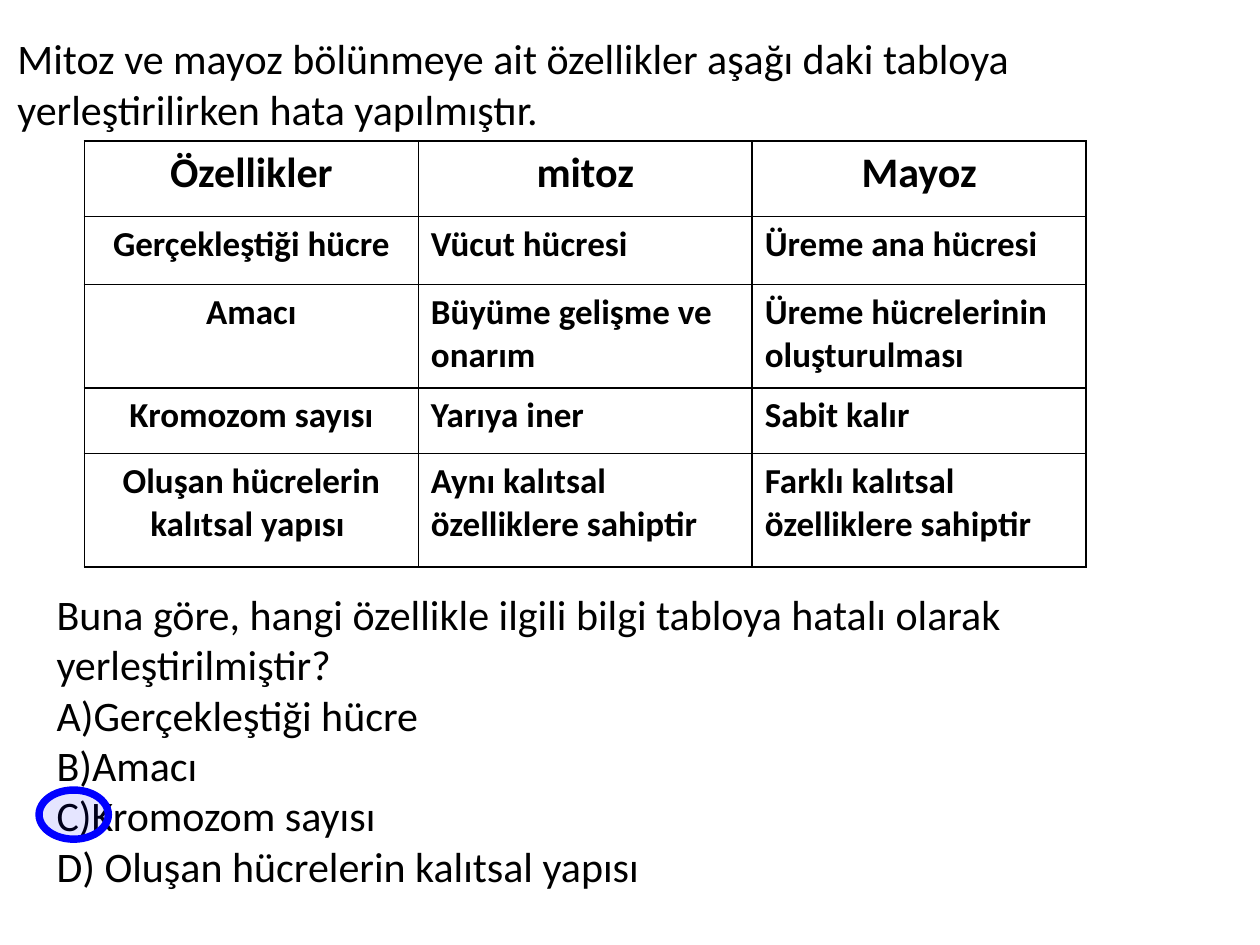
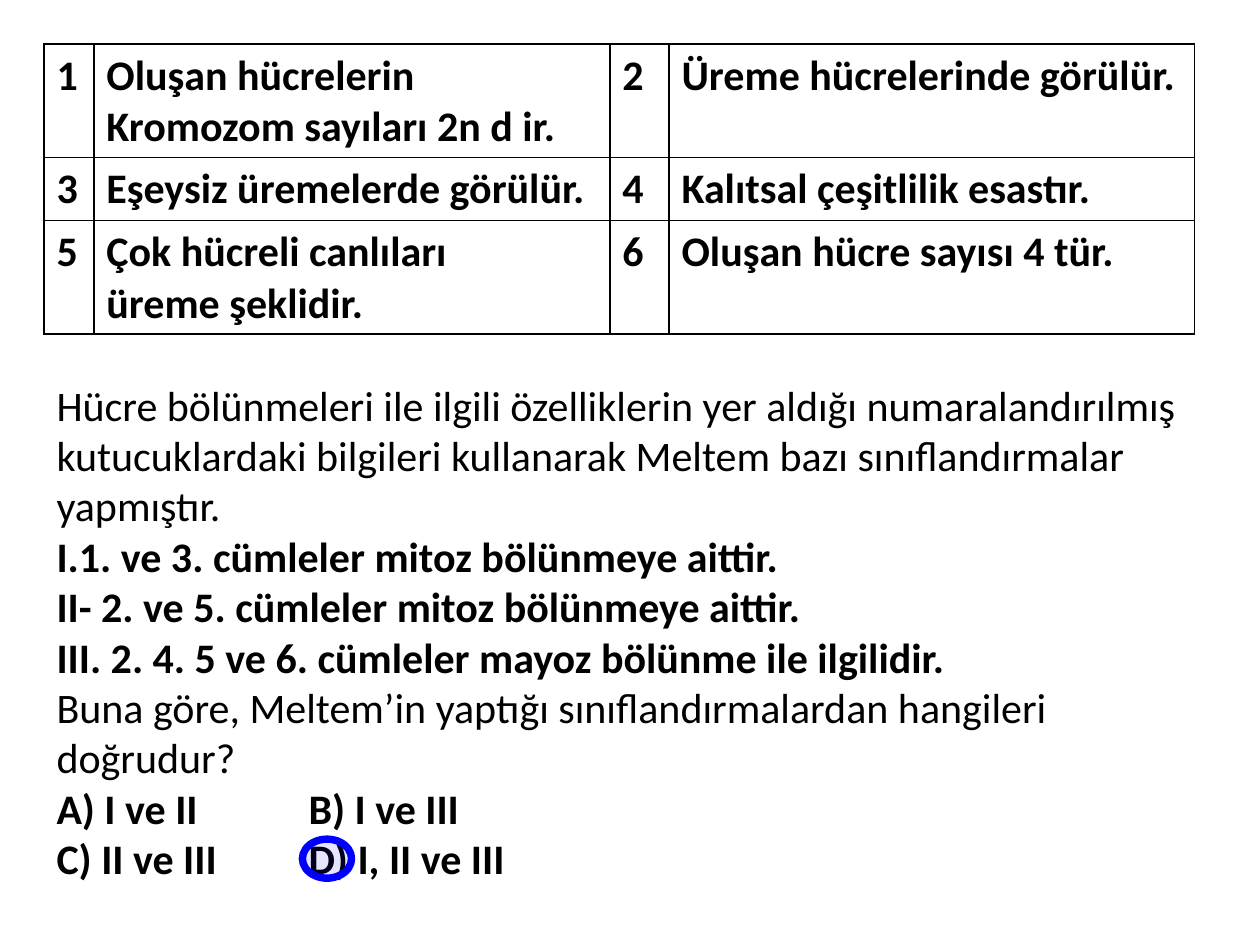
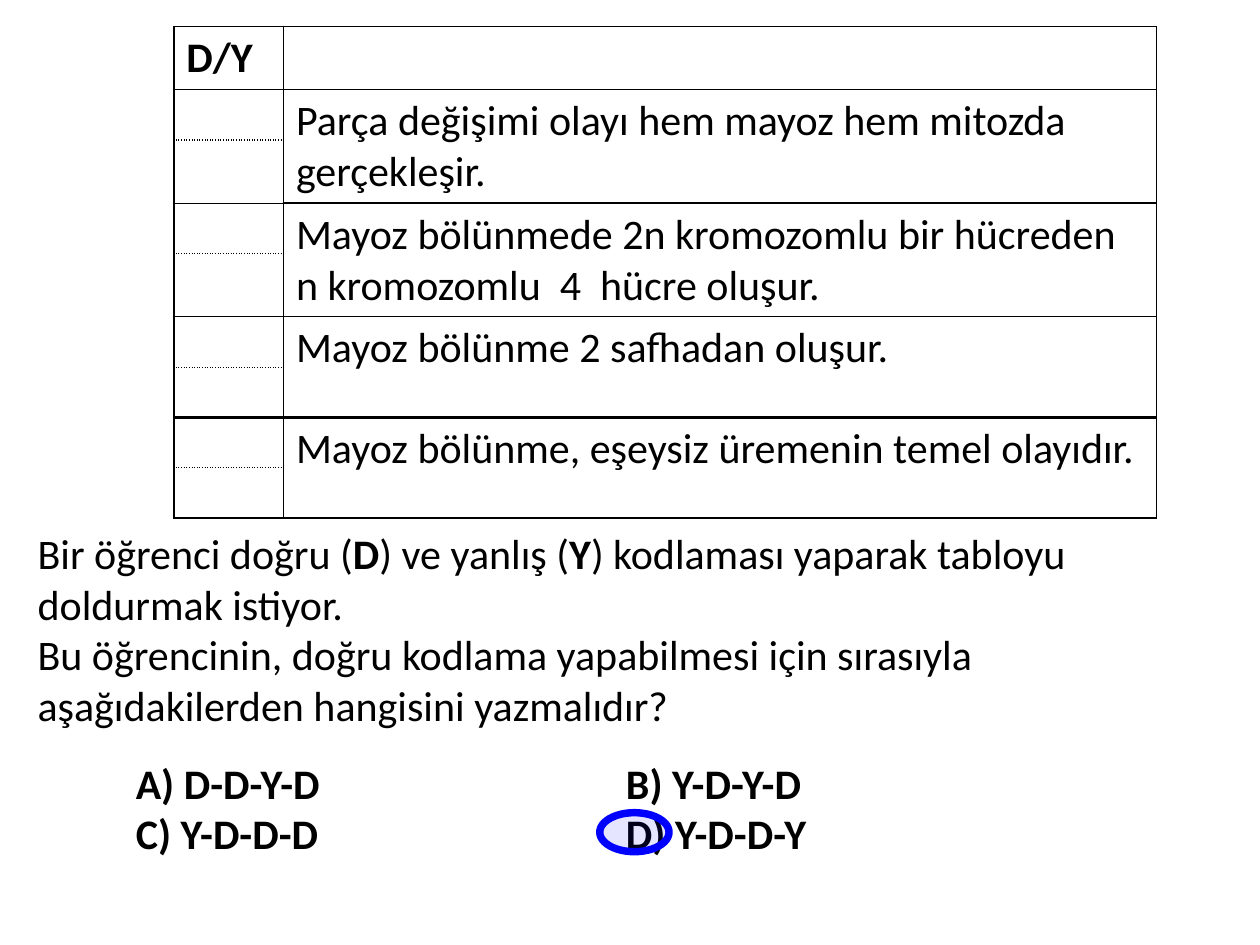
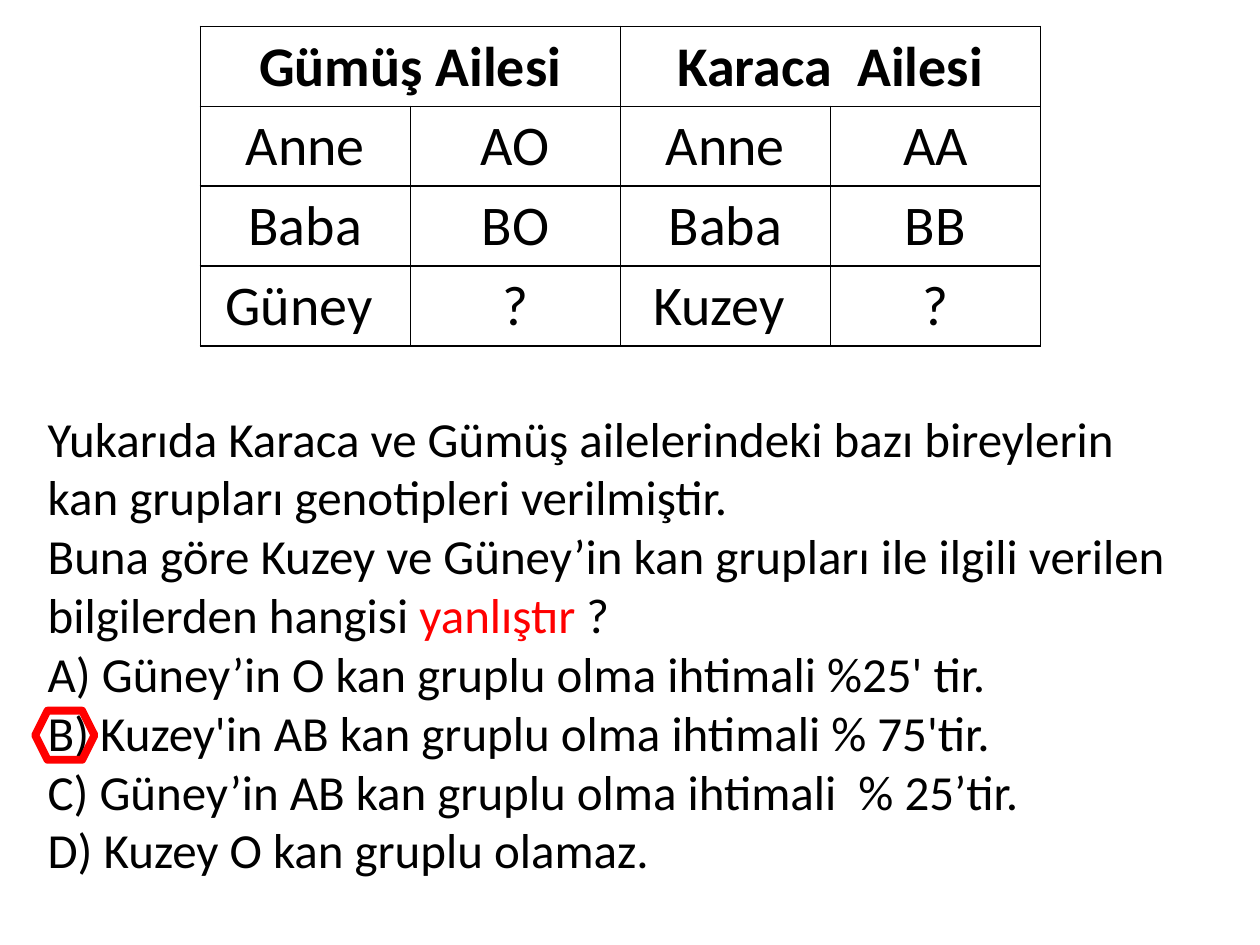
from pptx import Presentation
from pptx import util as u
from pptx.dml.color import RGBColor
from pptx.enum import shapes, text
from pptx.oxml import parse_xml
from pptx.oxml.ns import nsdecls, qn
from lxml import etree

WIDE, HIGH = u.Inches(10), u.Inches(7.5)
COLS, ROWS = 100, 75
INK = {"text": "000000", "paper": "FFFFFF", "mark": "0000FF", "wrong": "FF0000"}
BASE = {"name": "Calibri", "size": 24, "bold": False, "ink": "text"}
BOLD = {"bold": True}
MID = text.PP_ALIGN.CENTER
LEFT = text.PP_ALIGN.LEFT
DOTS = (0.75, "sysDot")
THIN = (0.25, "solid")
LINE = (1, "solid")
THICK = (2.25, "solid")


def across(n):
    return round(WIDE * n / COLS)


def down(n):
    return round(HIGH * n / ROWS)


def place(x, y, w, h):
    return across(x), down(y), across(w), down(h)


def paint(key):
    return RGBColor.from_string(INK[key])


def add_run(para, words, form):
    run = para.add_run()
    run.text = words
    for key, val in form.items():
        if key == "ink":
            run.font.color.rgb = paint(val)
        else:
            setattr(run.font, key, u.Pt(val) if key == "size" else val)


def fill_para(para, parts, form):
    for part in [parts] if isinstance(parts, (str, tuple)) else parts:
        words, extra = (part, {}) if isinstance(part, str) else part
        for num, row in enumerate(words.split("\n")):
            if num:
                para.add_line_break()
            if row:
                add_run(para, row, {**BASE, **form, **extra})


def set_tab(para, stop):
    tabs = etree.SubElement(para._p.get_or_add_pPr(), qn("a:tabLst"))
    etree.SubElement(tabs, qn("a:tab"), pos=str(across(stop)), algn="l")


def add_text(slide, spot, paras, form={}, stop=None):
    frame = slide.shapes.add_textbox(*place(*spot)).text_frame
    frame.word_wrap = True
    frame.auto_size = text.MSO_AUTO_SIZE.SHAPE_TO_FIT_TEXT
    for num, parts in enumerate(paras):
        para = frame.add_paragraph() if num else frame.paragraphs[0]
        if stop:
            set_tab(para, stop)
        fill_para(para, parts, form)


def draw_edge(cell, side, rule):
    width, dash = rule
    cell._tc.get_or_add_tcPr().append(parse_xml(
        f'<a:ln{side} {nsdecls("a")} w="{u.Pt(width)}"><a:solidFill>'
        f'<a:srgbClr val="{INK["text"]}"/></a:solidFill>'
        f'<a:prstDash val="{dash}"/></a:ln{side}>'))


def add_grid(slide, spot, wide, high, cells, look, spans=(), rules={}):
    x, y = spot
    box = place(x, y, sum(wide), sum(high))
    table = slide.shapes.add_table(len(high), len(wide), *box).table
    table.first_row = table.horz_banding = False
    for col, size in zip(table.columns, wide):
        col.width = across(size)
    for row, size in zip(table.rows, high):
        row.height = down(size)
    for r, row in enumerate(cells):
        for c, words in enumerate(row):
            cell = table.cell(r, c)
            for side, rule in (("L", LINE), ("R", LINE),
                               ("T", rules.get((r - 1, c), LINE)),
                               ("B", rules.get((r, c), LINE))):
                draw_edge(cell, side, rule)
            cell.fill.solid()
            cell.fill.fore_color.rgb = paint("paper")
            if words:
                form, align = look(r, c)
                para = cell.text_frame.paragraphs[0]
                para.alignment = align
                fill_para(para, words, form)
    for start, end in spans:
        table.cell(*start).merge(table.cell(*end))


def add_mark(slide, spot, kind="OVAL", ink="mark", width=4.25, tint=True):
    mark = slide.shapes.add_shape(shapes.MSO_SHAPE[kind], *place(*spot))
    mark.shadow.inherit = False
    mark.line.color.rgb = paint(ink)
    mark.line.width = u.Pt(width)
    if not tint:
        mark.fill.background()
        return
    mark.fill.solid()
    mark.fill.fore_color.rgb = paint(ink)
    clr = mark._element.spPr.find(qn("a:solidFill")).find(qn("a:srgbClr"))
    etree.SubElement(clr, qn("a:alpha"), val="10000")


def find_error(slide):
    add_text(slide, (0.4, 2.1, 97.7, 9.1), [
        "Mitoz ve mayoz bölünmeye ait özellikler aşağı daki tabloya "
        "yerleştirilirken hata yapılmıştır."])
    add_grid(slide, (6.7, 11.2), [26.5] * 3, [6, 5.4, 8.2, 5.2, 9], [
        ["Özellikler", "mitoz", "Mayoz"],
        ["Gerçekleştiği hücre", "Vücut hücresi", "Üreme ana hücresi"],
        ["Amacı", "Büyüme gelişme ve onarım", "Üreme hücrelerinin oluşturulması"],
        ["Kromozom sayısı", "Yarıya iner", "Sabit kalır"],
        ["Oluşan hücrelerin kalıtsal yapısı ", "Aynı kalıtsal özelliklere sahiptir",
         "Farklı kalıtsal özelliklere sahiptir"],
    ], lambda r, c: ({"bold": True, "size": 20 if r else 24}, LEFT if r and c else MID))
    add_text(slide, (3.5, 46.2, 89.8, 25.2), [
        "Buna göre, hangi özellikle ilgili bilgi tabloya hatalı olarak "
        "yerleştirilmiştir?",
        "A)Gerçekleştiği hücre",
        "B)Amacı",
        "C)Kromozom sayısı",
        "D) Oluşan hücrelerin kalıtsal yapısı"])
    add_mark(slide, (3.1, 62.7, 5.5, 3.9))


def sort_facts(slide):
    add_text(slide, (3.5, 29.6, 94.5, 41.4), [
        "Hücre bölünmeleri ile ilgili özelliklerin yer aldığı numaralandırılmış "
        "kutucuklardaki bilgileri kullanarak Meltem bazı sınıflandırmalar yapmıştır.",
        ("I.1. ve 3. cümleler mitoz bölünmeye aittir.", BOLD),
        ("II- 2. ve 5. cümleler mitoz bölünmeye aittir.", BOLD),
        [("III. 2. 4. 5 ve 6. cümleler mayoz bölünme ile ilgilidir.\n", BOLD),
         "Buna göre, Meltem’in yaptığı sınıflandırmalardan hangileri doğrudur?"],
        ("A) I ve II\tB) I ve III", BOLD),
        ("C) II ve III\tD) I, II ve III", BOLD)], stop=20)
    add_grid(slide, (3.5, 3.5), [3.95, 40.95, 4.7, 41.7], [9, 5, 9], [
        ["1", "Oluşan hücrelerin Kromozom sayıları 2n d ir.",
         "2", "Üreme hücrelerinde görülür."],
        ["3", "Eşeysiz üremelerde görülür.", "4", "Kalıtsal çeşitlilik esastır."],
        ["5", "Çok hücreli canlıları\nüreme şeklidir.",
         "6", "Oluşan hücre sayısı 4 tür."],
    ], lambda r, c: (BOLD, LEFT))
    add_mark(slide, (24, 66.6, 3.9, 3.1))


def true_false(slide):
    facts = ["Parça değişimi olayı hem mayoz hem mitozda gerçekleşir.",
             "Mayoz bölünmede 2n kromozomlu bir hücreden n kromozomlu  4  hücre oluşur.",
             "Mayoz bölünme 2 safhadan oluşur.",
             "Mayoz bölünme, eşeysiz üremenin temel olayıdır."]
    cells = [["D/Y", ""]]
    for fact in facts:
        cells += [["", fact], ["", ""]]
    tops = range(1, len(cells), 2)
    rules = {(r, 0): DOTS for r in tops}
    rules.update({(2, 0): THIN, (4, 0): THIN, (5, 0): (0.25, "dot"),
                  (6, 0): THICK, (5, 1): THICK, (6, 1): THICK})
    add_grid(slide, (13.8, 2.1), [8.7, 69.3], [5] + [4, 5] * 2 + [4] * 4, cells,
             lambda r, c: ({"bold": r == 0}, LEFT),
             [((r, 1), (r + 1, 1)) for r in tops], rules)
    add_text(slide, (2, 41.4, 96.9, 17.2), [
        ["Bir öğrenci doğru (", ("D", BOLD), ") ve yanlış (", ("Y", BOLD),
         ") kodlaması yaparak tabloyu doldurmak istiyor."],
        "Bu öğrencinin, doğru kodlama yapabilmesi için sırasıyla "
        "aşağıdakilerden hangisini yazmalıdır?"])
    add_text(slide, (9.8, 59.6, 70.6, 9.1),
             ["A) D-D-Y-D\tB) Y-D-Y-D", "C) Y-D-D-D\tD) Y-D-D-Y"], BOLD, 38.9)
    add_mark(slide, (47.6, 64.5, 5.5, 3.1))


def blood_types(slide):
    add_text(slide, (2.8, 31.9, 92.9, 38.7), [
        "Yukarıda Karaca ve Gümüş ailelerindeki bazı bireylerin kan grupları "
        "genotipleri verilmiştir.",
        ["Buna göre Kuzey ve Güney’in kan grupları ile ilgili verilen "
         "bilgilerden hangisi ", ("yanlıştır", {"ink": "wrong"}), " ?"],
        "A) Güney’in O kan gruplu olma ihtimali %25' tir.",
        "B) Kuzey'in AB kan gruplu olma ihtimali % 75'tir.",
        "C) Güney’in AB kan gruplu olma ihtimali  % 25’tir.",
        "D) Kuzey O kan gruplu olamaz."], {"size": 28})
    add_mark(slide, (2.8, 56.4, 4.7, 3.9), "HEXAGON", "wrong", 4.5, False)
    add_grid(slide, (15.9, 2.1), [16.67] * 4, [6.33] * 4, [
        ["Gümüş Ailesi", "", "Karaca  Ailesi", ""],
        ["Anne", "AO", "Anne", "AA"],
        ["Baba", "BO", "Baba", "BB"],
        ["Güney ", "?", "Kuzey ", "?"],
    ], lambda r, c: ({"size": 32, "bold": r == 0}, MID),
        [((0, c), (0, c + 1)) for c in (0, 2)])


def main():
    deck = Presentation()
    deck.slide_width, deck.slide_height = WIDE, HIGH
    for build in (find_error, sort_facts, true_false, blood_types):
        build(deck.slides.add_slide(deck.slide_layouts[6]))
    deck.save("out.pptx")


if __name__ == "__main__":
    main()
